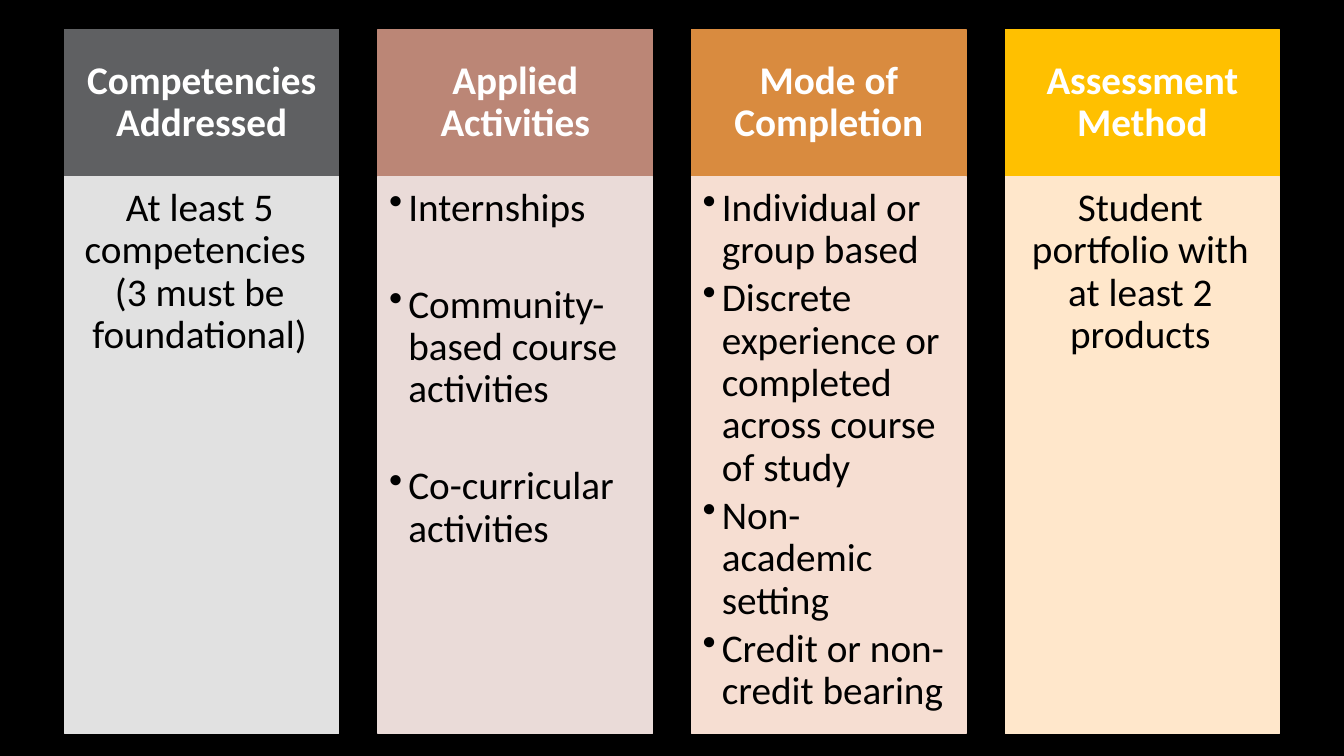
"""Build a slide of four headed columns describing a programme."""
from lxml import etree
from pptx import Presentation
from pptx import util as u
from pptx.dml.color import RGBColor
from pptx.enum import shapes, text
from pptx.oxml.ns import qn

COLORS = {
    "background": "000000", "heading": "FFFFFF", "body": "000000",
    "gray": "5F6062", "pale gray": "E1E1E1",
    "rose": "BB8676", "pale rose": "EADBD8",
    "orange": "D98B3F", "pale orange": "F6DED2",
    "gold": "FFC000", "pale gold": "FFE7CB",
}
LEFT, PITCH, WIDTH = 0.64, 3.11, 2.72
TOP, HEAD_HEIGHT, BODY_HEIGHT = 0.29, 1.46, 5.53
HEAD_INSETS = (0.16, 0.09, 0.16, 0.09)
BODY_INSETS = (0.11, 0.11, 0.15, 0.17)
BULLET_INDENT = 0.19
TIGHT, LOOSE = 4.2, 39

COLUMNS = [
    ("Competencies Addressed", "gray",
     ["At least 5 competencies \n(3 must be foundational)"], False, TIGHT),
    ("Applied Activities", "rose",
     ["Internships", "Community-based course activities",
      "Co-curricular activities"], True, LOOSE),
    ("Mode of Completion", "orange",
     ["Individual or group based",
      "Discrete experience or completed across course of study",
      "Non-academic setting", "Credit or non-credit bearing"], True, TIGHT),
    ("Assessment Method", "gold",
     ["Student portfolio with at least 2 products"], False, TIGHT),
]


def color(name):
    """Return the named colour."""
    return RGBColor.from_string(COLORS[name])


def add_box(slide, column, top, height, fill):
    """Add a plain rectangle in the given column."""
    shape = slide.shapes.add_shape(
        shapes.MSO_SHAPE.RECTANGLE, u.Inches(LEFT + column * PITCH),
        u.Inches(top), u.Inches(WIDTH), u.Inches(height))
    shape.shadow.inherit = False
    shape.fill.solid()
    shape.fill.fore_color.rgb = color(fill)
    shape.line.color.rgb = color(fill)
    shape.line.width = u.Pt(1)
    return shape


def add_bullet(paragraph):
    """Give a paragraph a hanging round bullet."""
    properties = paragraph._p.get_or_add_pPr()
    indent = u.Inches(BULLET_INDENT)
    properties.set("marL", str(indent))
    properties.set("indent", str(-indent))
    etree.SubElement(properties, qn("a:buChar")).set("char", "•")


def write(shape, lines, *, insets, ink, anchor, bold=False, bullets=False, gap=TIGHT):
    """Fill a shape with formatted paragraphs."""
    frame = shape.text_frame
    frame.word_wrap = True
    frame.vertical_anchor = anchor
    (frame.margin_left, frame.margin_top,
     frame.margin_right, frame.margin_bottom) = map(u.Inches, insets)
    for index, line in enumerate(lines):
        paragraph = frame.add_paragraph() if index else frame.paragraphs[0]
        paragraph.text = line
        paragraph.alignment = text.PP_ALIGN.LEFT if bullets else text.PP_ALIGN.CENTER
        paragraph.line_spacing = 0.9
        paragraph.space_after = u.Pt(gap)
        if bullets:
            add_bullet(paragraph)
        for run in paragraph.runs:
            run.font.name = "Calibri"
            run.font.size = u.Pt(28)
            run.font.bold = bold
            run.font.color.rgb = color(ink)


def add_column(slide, column, heading, hue, lines, bullets, gap):
    """Add a heading box with its body box below."""
    head = add_box(slide, column, TOP, HEAD_HEIGHT, hue)
    write(head, [heading], insets=HEAD_INSETS, ink="heading",
          anchor=text.MSO_ANCHOR.MIDDLE, bold=True)
    body = add_box(slide, column, TOP + HEAD_HEIGHT, BODY_HEIGHT, f"pale {hue}")
    write(body, lines, insets=BODY_INSETS, ink="body",
          anchor=text.MSO_ANCHOR.TOP, bullets=bullets, gap=gap)


def main():
    """Build and save the presentation."""
    presentation = Presentation()
    presentation.slide_width = u.Inches(13.33)
    presentation.slide_height = u.Inches(7.5)
    slide = presentation.slides.add_slide(presentation.slide_layouts[6])
    slide.background.fill.solid()
    slide.background.fill.fore_color.rgb = color("background")
    for column, content in enumerate(COLUMNS):
        add_column(slide, column, *content)
    presentation.save("out.pptx")


if __name__ == "__main__":
    main()
